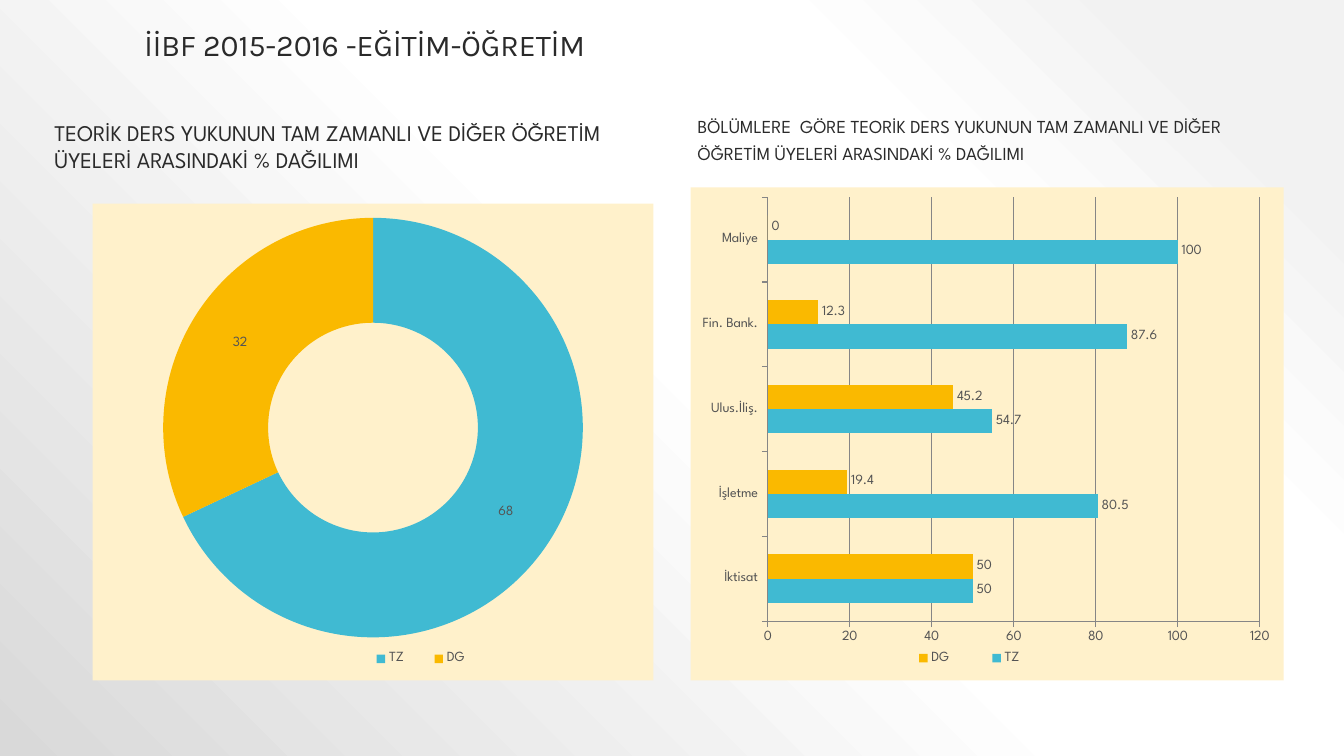
import pptx
import pptx.chart.data
import pptx.dml.color
import pptx.enum.chart
import pptx.enum.text
import pptx.oxml
import pptx.oxml.ns
import pptx.util

Pt = pptx.util.Pt
XL = pptx.enum.chart
TX = pptx.enum.text
NS = pptx.oxml.ns.nsdecls("a", "c")

INK, GREY, LINE = "2A2A2A", "545454", "868686"
CREAM, BLUE, AMBER = "FFF1CB", "40BAD2", "FAB900"


def rgb(value):
    return pptx.dml.color.RGBColor.from_string(value)


def apply(target, values):
    for name, value in values.items():
        setattr(target, name, value)


class Deck:
    """Holds the style and the current slide; places are percent of the slide."""

    body_font = "League Spartan"
    title_font = "Karla"

    def __init__(self, width, height):
        self.prs = pptx.Presentation()
        self.prs.slide_width = pptx.util.Inches(width)
        self.prs.slide_height = pptx.util.Inches(height)
        self.slide = self.prs.slides.add_slide(self.prs.slide_layouts[4])

    def place(self, at):
        w, h = self.prs.slide_width, self.prs.slide_height
        return [int(share * side / 100) for share, side in zip(at, (w, h, w, h))]

    def background(self, stops):
        self.slide.background.fill.gradient()
        grad = self.slide.element.find(".//" + pptx.oxml.ns.qn("a:gradFill"))
        gs = "".join(f'<a:gs pos="{pos * 1000}"><a:srgbClr val="{color}"/></a:gs>'
                     for pos, color in stops)
        grad.getparent().replace(grad, pptx.oxml.parse_xml(
            f'<a:gradFill {NS} rotWithShape="1"><a:gsLst>{gs}</a:gsLst>'
            '<a:path path="circle"><a:fillToRect l="100000" b="100000"/></a:path>'
            '</a:gradFill>'))

    def text(self, idx, at, text, size, font, spacing, frame):
        sp = next(ph for ph in self.slide.placeholders
                  if ph.placeholder_format.idx == idx)
        apply(sp, dict(zip(("left", "top", "width", "height"), self.place(at))))
        tf = sp.text_frame
        apply(tf, {"word_wrap": True, "auto_size": TX.MSO_AUTO_SIZE.NONE, **frame})
        p = tf.paragraphs[0]
        apply(p, {"alignment": TX.PP_ALIGN.LEFT, "line_spacing": spacing,
                  "space_before": Pt(0)})
        r = p.add_run()
        r.text = text
        apply(r.font, {"name": font, "size": Pt(size), "bold": False})
        r.font.color.rgb = rgb(INK)

    def layout(self, element, box, inner=False):
        """Gives a plot area or legend a fixed box, in shares of the chart."""
        target = '<c:layoutTarget val="inner"/>' if inner else ""
        modes = "".join(f'<c:{m}Mode val="edge"/>' for m in "xy")
        sizes = "".join(f'<c:{k} val="{v}"/>' for k, v in zip("xywh", box))
        for old in element.findall(pptx.oxml.ns.qn("c:layout")):
            element.remove(old)
        new = pptx.oxml.parse_xml(
            f'<c:layout {NS}><c:manualLayout>{target}{modes}{sizes}'
            '</c:manualLayout></c:layout>')
        if inner:
            element.insert(0, new)
        else:
            element.find(pptx.oxml.ns.qn("c:legendPos")).addnext(new)

    def chart(self, kind, at, cats, series, plot_box, legend_box):
        data = pptx.chart.data.CategoryChartData()
        data.categories = cats
        for name, values in series:
            data.add_series(name, values)
        chart = self.slide.shapes.add_chart(kind, *self.place(at), data).chart
        apply(chart, {"has_title": False, "has_legend": True})
        apply(chart.font, {"name": self.body_font, "size": Pt(10)})
        chart.font.color.rgb = rgb(GREY)
        apply(chart.legend, {"position": XL.XL_LEGEND_POSITION.BOTTOM,
                             "include_in_layout": False})
        plot = chart.plots[0]
        plot.has_data_labels = True
        apply(plot.data_labels, {"show_value": True, "show_percentage": False,
                                 "number_format": "General",
                                 "number_format_is_linked": False})
        space = chart.element
        space.find(pptx.oxml.ns.qn("c:chart")).addnext(pptx.oxml.parse_xml(
            f'<c:spPr {NS}><a:solidFill><a:srgbClr val="{CREAM}"/></a:solidFill>'
            '<a:ln><a:noFill/></a:ln></c:spPr>'))
        self.layout(space.find(".//" + pptx.oxml.ns.qn("c:plotArea")), plot_box, True)
        self.layout(space.find(".//" + pptx.oxml.ns.qn("c:legend")), legend_box)
        return chart

    def doughnut(self, at, cats, values, colors, **boxes):
        chart = self.chart(XL.XL_CHART_TYPE.DOUGHNUT, at, cats,
                           [("Series 1", values)], **boxes)
        plot = chart.plots[0]
        plot.vary_by_categories = True
        for i, color in enumerate(colors):
            fill = plot.series[0].points[i].format.fill
            fill.solid()
            fill.fore_color.rgb = rgb(color)

    def bars(self, at, cats, series, colors, **boxes):
        chart = self.chart(XL.XL_CHART_TYPE.BAR_CLUSTERED, at, cats, series, **boxes)
        plot = chart.plots[0]
        apply(plot, {"vary_by_categories": False, "gap_width": 150, "overlap": 0})
        plot.data_labels.position = XL.XL_LABEL_POSITION.OUTSIDE_END
        for s, color in zip(plot.series, colors):
            s.format.fill.solid()
            s.format.fill.fore_color.rgb = rgb(color)
        cat, val = chart.category_axis, chart.value_axis
        apply(val, {"minimum_scale": 0, "maximum_scale": 120, "major_unit": 20,
                    "has_major_gridlines": True})
        for axis in (cat, val):
            axis.major_tick_mark = XL.XL_TICK_MARK.OUTSIDE
        for part in (cat, val, val.major_gridlines):
            part.format.line.color.rgb = rgb(LINE)
            part.format.line.width = Pt(0.75)

    def save(self):
        for ph in list(self.slide.placeholders):
            if not ph.text_frame.text:
                ph.element.getparent().remove(ph.element)
        self.prs.save("out.pptx")


def main():
    deck = Deck(13.33, 7.5)
    deck.background([(10, "F2F2F2"), (28, "FFFFFF"), (48, "FFFFFF"), (100, "D9D9D9")])

    # Title and the two chart headings
    deck.text(0, (10, 4, 80, 5), "İİBF 2015-2016 -EĞİTİM-ÖĞRETİM", 21.6,
              deck.title_font, 0.9, {"vertical_anchor": TX.MSO_ANCHOR.BOTTOM})
    deck.text(1, (3.3, 15.33, 43.96, 8),
              "TEORİK DERS YUKUNUN TAM ZAMANLI VE DİĞER ÖĞRETİM ÜYELERİ "
              "ARASINDAKİ % DAĞILIMI", 16, deck.body_font, Pt(19.2),
              {"vertical_anchor": TX.MSO_ANCHOR.MIDDLE})
    deck.text(3, (51.16, 14.27, 41.34, 9.07),
              "BÖLÜMLERE  GÖRE TEORİK DERS YUKUNUN TAM ZAMANLI VE DİĞER "
              "ÖĞRETİM ÜYELERİ ARASINDAKİ % DAĞILIMI", 13.1, deck.body_font, Pt(19.2),
              {"vertical_anchor": TX.MSO_ANCHOR.TOP, "margin_top": Pt(1.5)})

    # Overall share
    deck.doughnut((6.9, 26.93, 41.71, 63.07), ["TZ", "DG"], [68, 32], [BLUE, AMBER],
                  plot_box=(0.12, 0.03, 0.76, 0.88),
                  legend_box=(0.46, 0.93, 0.25, 0.05))

    # Share by department
    deck.bars((51.39, 24.8, 44.11, 65.2),
              ["İktisat", "İşletme", "Ulus.İliş.", "Fin. Bank.", "Maliye"],
              [("TZ", [50, 80.5, 54.7, 87.6, 100]),
               ("DG", [50, 19.4, 45.2, 12.3, 0])], [BLUE, AMBER],
              plot_box=(0.13, 0.02, 0.83, 0.86),
              legend_box=(0.32, 0.93, 0.3, 0.05))

    deck.save()


if __name__ == "__main__":
    main()
